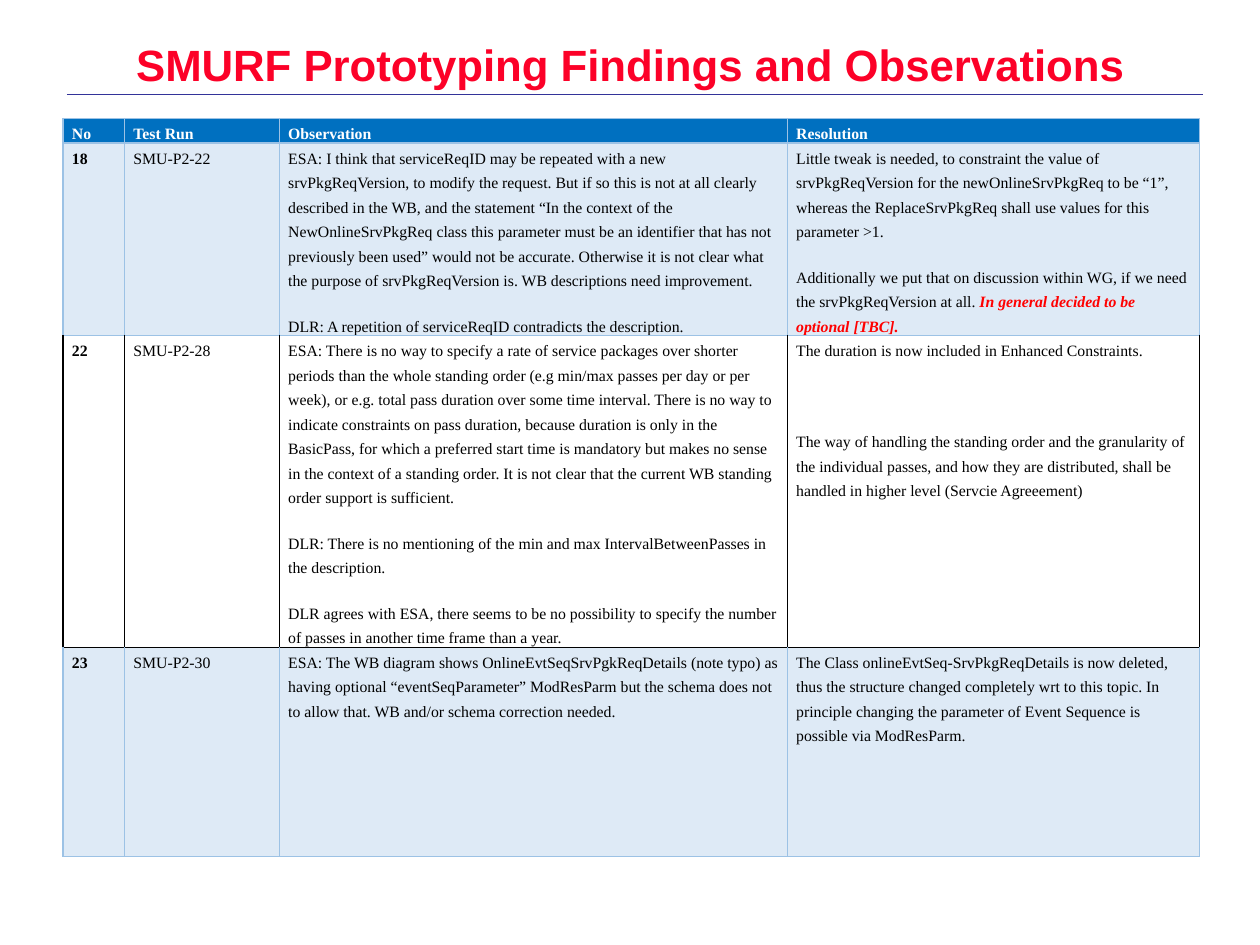
from lxml import etree
from pptx import Presentation
from pptx.dml.color import RGBColor
from pptx.enum.shapes import MSO_CONNECTOR
from pptx.enum.text import MSO_ANCHOR, PP_ALIGN
from pptx.oxml.ns import qn
from pptx.util import Cm, Pt

LEFT, CENTER, JUSTIFY = PP_ALIGN.LEFT, PP_ALIGN.CENTER, PP_ALIGN.JUSTIFY
TOP = MSO_ANCHOR.TOP
STRAIGHT = MSO_CONNECTOR.STRAIGHT

THEME = {
    "title_font": "Arial", "title_size": 25, "title": "FC0128",
    "body_font": "Times New Roman", "body_size": 9,
    "line_pitch": 14, "paragraph_gap": 12,
    "text": "000000", "header_text": "FFFFFF", "emphasis": "FF0000",
    "header_fill": "0070C0", "band_fill": "DEEAF6",
    "light_border": "9CC2E5", "dark_border": "000000", "rule": "333399",
}

TITLE = "SMURF Prototyping Findings and Observations"
HEADERS = ["No", "Test Run", "Observation", "Resolution"]
HEADER_ALIGN = [JUSTIFY, JUSTIFY, LEFT, JUSTIFY]
BODY_ALIGN = [JUSTIFY, JUSTIFY, LEFT, LEFT]
COLUMN_WIDTHS = [1.24, 3.12, 10.24, 8.31]
ROW_HEIGHTS = [0.48, 3.88, 6.28, 4.22]
WIDE_GAP = 2 * THEME["paragraph_gap"] + THEME["line_pitch"]

FINDINGS = [
    {
        "number": "18", "test_run": "SMU-P2-22",
        "observation": [
            "ESA: I think that serviceReqID may be repeated with a new srvPkgReqVersion, to modify the request. But if so this is not at all clearly described in the WB, and the statement “In the context of the NewOnlineSrvPkgReq class this parameter must be an identifier that has not previously been used” would not be accurate. Otherwise it is not clear what the purpose of srvPkgReqVersion is. WB descriptions need improvement.",
            "DLR: A repetition of serviceReqID contradicts the description.",
        ],
        "resolution": [
            "Little tweak is needed, to constraint the value of srvPkgReqVersion for the newOnlineSrvPkgReq to be “1”, whereas the ReplaceSrvPkgReq shall use values for this parameter >1.",
            "Additionally we put that on discussion within WG, if we need the srvPkgReqVersion at all. ",
        ],
        "decision": "In general decided to be optional [TBC].",
    },
    {
        "number": "22", "test_run": "SMU-P2-28",
        "observation": [
            "ESA: There is no way to specify a rate of service packages over shorter periods than the whole standing order (e.g min/max passes per day or per week), or e.g. total pass duration over some time interval. There is no way to indicate constraints on pass duration, because duration is only in the BasicPass, for which a preferred start time is mandatory but makes no sense in the context of a standing order. It is not clear that the current WB standing order support is sufficient.",
            "DLR: There is no mentioning of the min and max IntervalBetweenPasses in the description.",
            "DLR agrees with ESA, there seems to be no possibility to specify the number of passes in another time frame than a year.",
        ],
        "resolution": [
            "The duration is now included in Enhanced Constraints.",
            "The way of handling the standing order and the granularity of the individual passes, and how they are distributed, shall be handled in higher level (Servcie Agreeement)",
        ],
        "resolution_gap": WIDE_GAP,
    },
    {
        "number": "23", "test_run": "SMU-P2-30",
        "observation": [
            "ESA: The WB diagram shows OnlineEvtSeqSrvPgkReqDetails (note typo) as having optional “eventSeqParameter” ModResParm but the schema does not to allow that. WB and/or schema correction needed.",
        ],
        "resolution": [
            "The Class onlineEvtSeq-SrvPkgReqDetails is now deleted, thus the structure changed completely wrt to this topic. In principle changing the parameter of Event Sequence is possible via ModResParm.",
        ],
    },
]


def color(name):
    return RGBColor.from_string(THEME[name])


def add_span(para, text, font="body", ink="text", bold=False, italic=False):
    span = para.add_run()
    span.text = text
    span.font.name = THEME[font + "_font"]
    span.font.size = Pt(THEME[font + "_size"])
    span.font.color.rgb = color(ink)
    span.font.bold = bold
    span.font.italic = italic


def add_title(page):
    box = page.shapes.add_textbox(Cm(1.27), Cm(0.76), Cm(22.86), Cm(2.03))
    frame = box.text_frame
    frame.word_wrap = True
    frame.vertical_anchor = TOP
    para = frame.paragraphs[0]
    para.alignment = CENTER
    para.line_spacing = 0.9
    add_span(para, TITLE, font="title", ink="title", bold=True)


def add_rule(page):
    rule = page.shapes.add_connector(STRAIGHT, Cm(1.35), Cm(1.9), Cm(24.26), Cm(1.9))
    rule.line.color.rgb = color("rule")
    rule.line.width = Pt(0.13)
    etree.SubElement(rule._element.spPr, qn("a:effectLst"))


def set_borders(cell, sides):
    properties = cell._tc.get_or_add_tcPr()
    for side in "LRTB":
        line = etree.SubElement(properties, qn("a:ln" + side), w=str(Pt(1)))
        fill = etree.SubElement(line, qn("a:solidFill"))
        etree.SubElement(fill, qn("a:srgbClr"), val=THEME[sides[side]])


def fill_cell(cell, paragraphs, align, fill, sides, gap=THEME["paragraph_gap"], **style):
    cell.margin_left = cell.margin_right = Cm(0.18)
    cell.margin_top = cell.margin_bottom = 0
    cell.vertical_anchor = TOP
    set_borders(cell, sides)
    if fill:
        cell.fill.solid()
        cell.fill.fore_color.rgb = color(fill)
    else:
        cell.fill.background()
    frame = cell.text_frame
    for index, text in enumerate(paragraphs):
        para = frame.add_paragraph() if index else frame.paragraphs[0]
        para.alignment = align
        para.line_spacing = Pt(THEME["line_pitch"])
        if index:
            para.space_before = Pt(gap)
        add_span(para, text, **style)


def add_findings(page):
    shape = page.shapes.add_table(
        len(ROW_HEIGHTS), len(COLUMN_WIDTHS), Cm(1.27), Cm(2.39),
        Cm(sum(COLUMN_WIDTHS)), Cm(sum(ROW_HEIGHTS)))
    table = shape.table
    table.horz_banding = False
    for column, width in zip(table.columns, COLUMN_WIDTHS):
        column.width = Cm(width)
    for row, height in zip(table.rows, ROW_HEIGHTS):
        row.height = Cm(height)

    light = dict.fromkeys("LRTB", "light_border")
    for column, header in enumerate(HEADERS):
        fill_cell(table.cell(0, column), [header], HEADER_ALIGN[column],
                  "header_fill", light, ink="header_text", bold=True)

    above = "light_border"
    for row, finding in enumerate(FINDINGS, 1):
        banded = row % 2 == 1
        border = "light_border" if banded else "dark_border"
        sides = {"L": border, "R": border, "T": above, "B": border}
        above = border
        contents = [[finding["number"]], [finding["test_run"]],
                    finding["observation"], finding["resolution"]]
        gaps = [THEME["paragraph_gap"]] * 3
        gaps.append(finding.get("resolution_gap", THEME["paragraph_gap"]))
        for column, paragraphs in enumerate(contents):
            fill_cell(table.cell(row, column), paragraphs, BODY_ALIGN[column],
                      "band_fill" if banded else None, sides,
                      gap=gaps[column], bold=column == 0)
        if "decision" in finding:
            para = table.cell(row, 3).text_frame.paragraphs[-1]
            add_span(para, finding["decision"], ink="emphasis", bold=True, italic=True)


def main():
    deck = Presentation()
    deck.slide_width, deck.slide_height = Cm(25.4), Cm(19.05)
    page = deck.slides.add_slide(deck.slide_layouts[6])
    add_rule(page)
    add_title(page)
    add_findings(page)
    deck.save("out.pptx")


if __name__ == "__main__":
    main()
